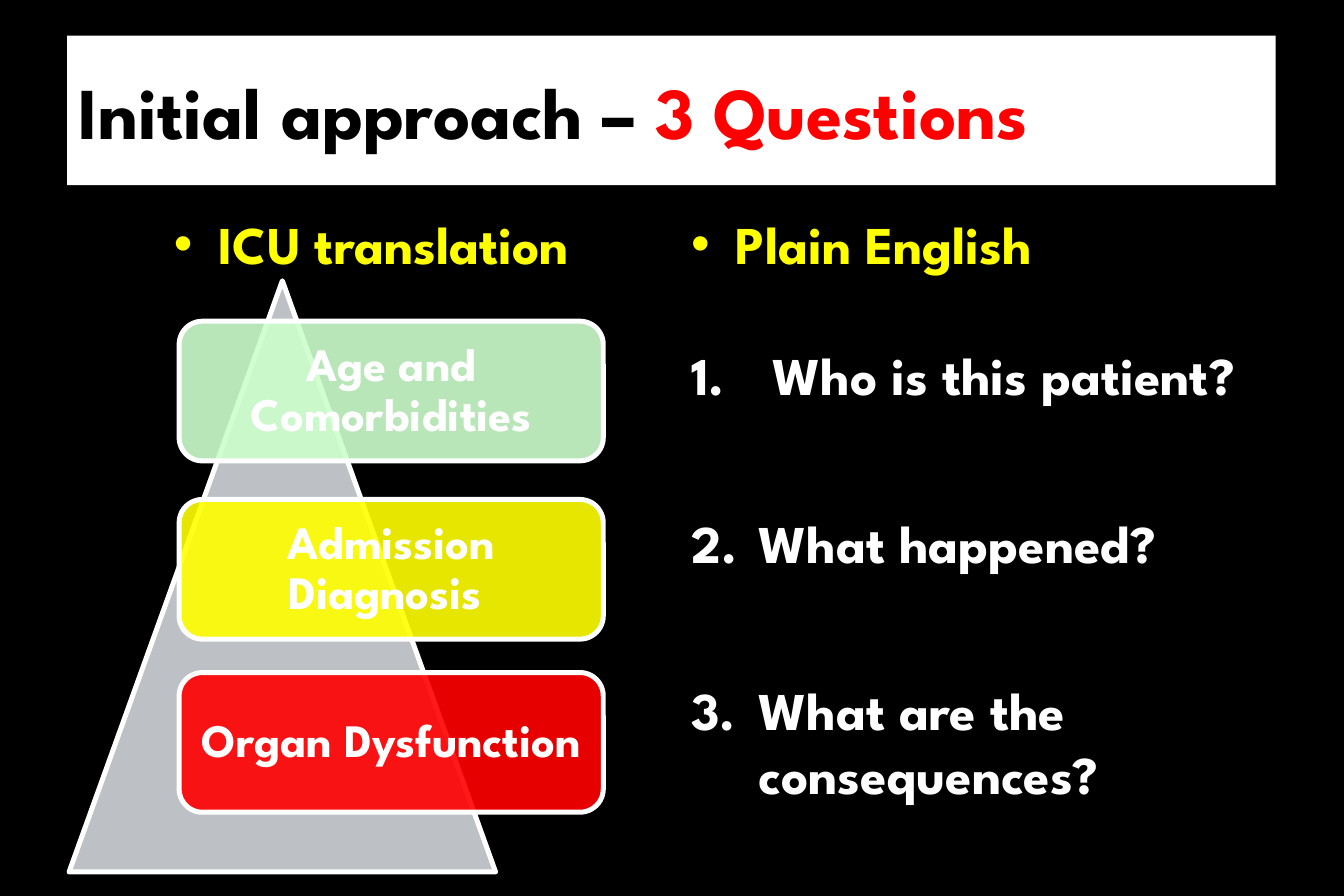
from lxml import etree
from pptx import Presentation
from pptx import util as u
from pptx.dml.color import RGBColor
from pptx.enum import shapes, text
from pptx.oxml.ns import qn

FONT = "League Spartan"
COLORS = {"black": "000000", "white": "FFFFFF", "red": "FF0000",
          "yellow": "FFFF00", "green": "CCFFCC", "grey": "BDC1C6"}

TITLE = [("Initial approach – ", "black"), ("3 Questions", "red")]
HEADINGS = [("ICU translation", 3.45, 10.16), ("Plain English", 14.45, 9.42)]
CARDS = [("Age and Comorbidities", "green", 6.83),
         ("Admission Diagnosis ", "yellow", 10.62),
         ("Organ Dysfunction ", "red", 14.3)]
QUESTIONS = [" Who is this patient?", "What happened?",
             "What are the consequences?"]


def rgb(name):
    return RGBColor.from_string(COLORS[name])


def add_shape(s, kind, box, fill, line=None, alpha=None):
    sp = s.shapes.add_shape(kind, *map(u.Cm, box))
    sp.shadow.inherit = False
    sp.fill.solid()
    sp.fill.fore_color.rgb = rgb(fill)
    if alpha:
        color = sp.fill._xPr.find(qn("a:solidFill"))[0]
        etree.SubElement(color, qn("a:alpha")).set("val", str(alpha * 1000))
    if line:
        sp.line.color.rgb = rgb(line)
        sp.line.width = u.Pt(3)
    else:
        sp.line.fill.background()
    return sp


def add_textbox(s, box):
    sp = s.shapes.add_textbox(*map(u.Cm, box))
    sp.text_frame.word_wrap = True
    return sp.text_frame


def add_run(p, words, size, color):
    r = p.add_run()
    r.text = words
    r.font.name = FONT
    r.font.size = u.Pt(size)
    r.font.bold = True
    r.font.color.rgb = rgb(color)


def add_bullet(p, indent, color, tag, **attrs):
    """Give the paragraph a hanging indent and a bullet or number."""
    pPr = p._p.get_or_add_pPr()
    pPr.set("marL", str(u.Cm(indent)))
    pPr.set("indent", str(-u.Cm(indent)))
    bu_color = etree.SubElement(pPr, qn("a:buClr"))
    etree.SubElement(bu_color, qn("a:srgbClr")).set("val", COLORS[color])
    etree.SubElement(pPr, qn("a:buFont")).set(
        "typeface", "Arial" if tag == "a:buChar" else FONT)
    etree.SubElement(pPr, qn(tag), attrs)


def add_title(s):
    sp = add_shape(s, shapes.MSO_SHAPE.RECTANGLE, (1.43, 0.76, 25.7, 3.18), "white")
    tf = sp.text_frame
    tf.word_wrap = True
    tf.vertical_anchor = text.MSO_ANCHOR.MIDDLE
    p = tf.paragraphs[0]
    p.alignment = text.PP_ALIGN.LEFT
    for words, color in TITLE:
        add_run(p, words, 44, color)


def add_pyramid(s):
    add_shape(s, shapes.MSO_SHAPE.ISOSCELES_TRIANGLE,
              (1.47, 5.97, 9.07, 12.57), "grey", "white")
    for words, color, top in CARDS:
        sp = add_shape(s, shapes.MSO_SHAPE.ROUNDED_RECTANGLE,
                       (3.81, top, 9.02, 2.97), color, "white", 90)
        tf = sp.text_frame
        tf.word_wrap = True
        tf.vertical_anchor = text.MSO_ANCHOR.MIDDLE
        tf.margin_left = tf.margin_right = u.Cm(0.3)
        tf.margin_top = tf.margin_bottom = u.Cm(0.3)
        p = tf.paragraphs[0]
        p.alignment = text.PP_ALIGN.CENTER
        p.line_spacing = 0.9
        add_run(p, words, 28, "white")


def add_questions(s):
    tf = add_textbox(s, (14.45, 7.16, 13.87, 9.91))
    for i, words in enumerate(QUESTIONS):
        p = tf.add_paragraph() if i else tf.paragraphs[0]
        if i:
            p.space_before = u.Pt(62.5)
        add_bullet(p, 1.43, "white", "a:buAutoNum", type="arabicPeriod")
        add_run(p, words, 32, "white")


def add_headings(s):
    for words, left, width in HEADINGS:
        p = add_textbox(s, (left, 4.37, width, 1.63)).paragraphs[0]
        add_bullet(p, 0.95, "yellow", "a:buChar", char="•")
        add_run(p, words, 32, "yellow")


def main():
    prs = Presentation()
    prs.slide_width, prs.slide_height = u.Cm(28.58), u.Cm(19.05)
    s = prs.slides.add_slide(prs.slide_layouts[6])
    s.background.fill.solid()
    s.background.fill.fore_color.rgb = rgb("black")
    add_title(s)
    add_pyramid(s)
    add_questions(s)
    add_headings(s)
    prs.save("out.pptx")


if __name__ == "__main__":
    main()
